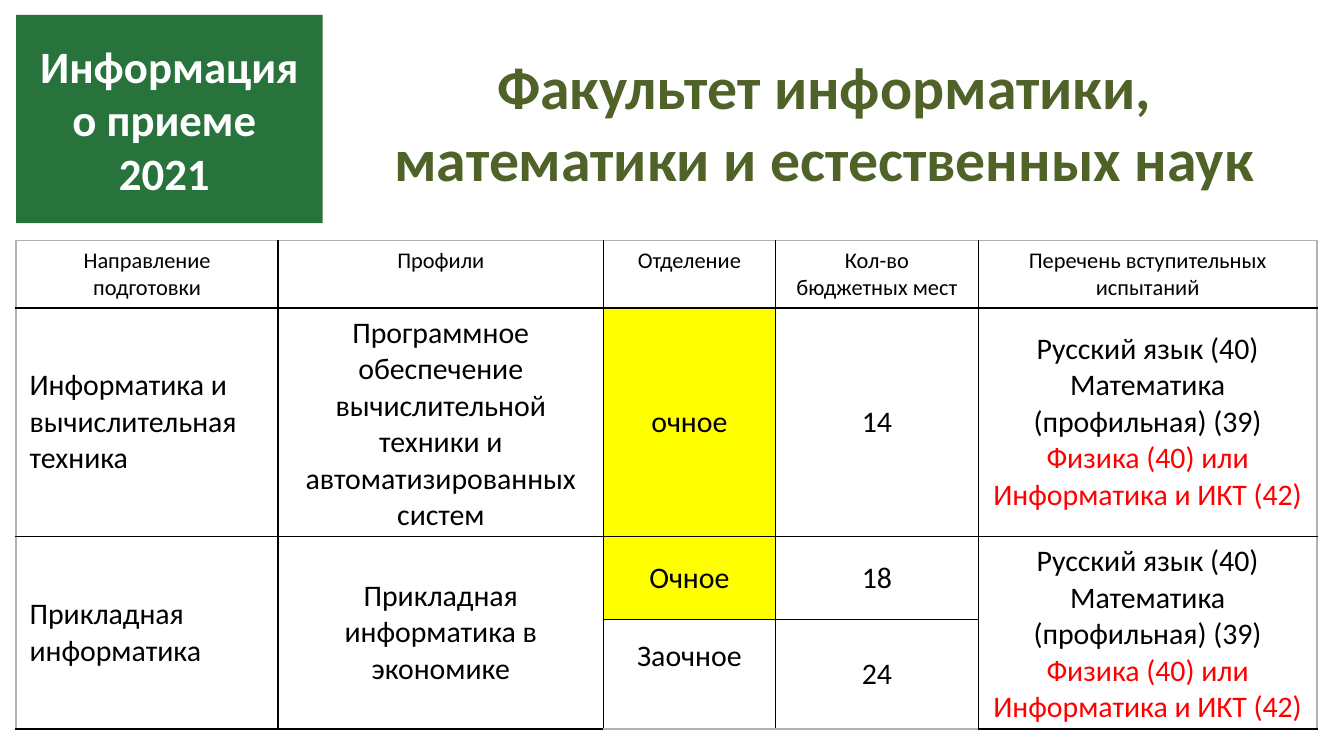
from lxml import etree
from pptx import Presentation
from pptx import util as u
from pptx.dml.color import RGBColor
from pptx.enum import shapes, text
from pptx.oxml import ns

FONT = "Calibri"
BLACK, WHITE, RED, YELLOW = "000000", "FFFFFF", "FF0000", "FFFF00"
GREEN, OLIVE, GRAY = "27733B", "4F6228", "B2B2B2"
COLUMN_WIDTHS = [1.95, 2.42, 1.28, 1.51, 2.52]
ROW_HEIGHTS = [0.5, 1.7, 0.62, 0.81]
EXAMS = [
    "Русский язык (40)",
    "Математика (профильная) (39)",
    "Физика (40) или Информатика и ИКТ (42)",
]
ROWS = [
    ["Направление подготовки", "Профили", "Отделение",
     "Кол-во бюджетных мест", "Перечень вступительных испытаний"],
    ["Информатика и вычислительная техника",
     "Программное обеспечение вычислительной техники и автоматизированных систем",
     "очное", "14", EXAMS],
    ["Прикладная информатика", "Прикладная информатика в экономике",
     "Очное", "18", EXAMS],
    ["", "", "Заочное", "24", ""],
]


def color(value):
    return RGBColor.from_string(value)


def write(frame, lines, size, font_color, bold=False, align=text.PP_ALIGN.CENTER):
    frame.word_wrap = True
    for index, line in enumerate(lines):
        paragraph = frame.add_paragraph() if index else frame.paragraphs[0]
        paragraph.text = line
        paragraph.alignment = align
        font = paragraph.font
        font.name, font.size, font.bold = FONT, u.Pt(size), bold
        font.color.rgb = color(font_color)


def add_badge(slide):
    shape = slide.shapes.add_shape(
        shapes.MSO_SHAPE.RECTANGLE,
        u.Inches(0.12), u.Inches(0.11), u.Inches(2.28), u.Inches(1.55))
    shape.shadow.inherit = False
    shape.fill.solid()
    shape.fill.fore_color.rgb = color(GREEN)
    shape.line.fill.background()
    shape.text_frame.vertical_anchor = text.MSO_ANCHOR.MIDDLE
    write(shape.text_frame, ["Информация о приеме \v2021 "], 24, WHITE, bold=True)


def add_title(slide):
    shape = slide.shapes.add_textbox(
        u.Inches(2.77), u.Inches(0.32), u.Inches(6.73), u.Inches(1.18))
    title = "Факультет информатики, математики и естественных наук"
    write(shape.text_frame, [title], 32, OLIVE, bold=True)


def set_borders(cell, row, column):
    outer_sides = {
        "lnL": column == 0,
        "lnR": column == len(COLUMN_WIDTHS) - 1,
        "lnT": row == 0,
        "lnB": row == len(ROW_HEIGHTS) - 1,
    }
    properties = cell._tc.get_or_add_tcPr()
    for index, (side, is_outer) in enumerate(outer_sides.items()):
        line = etree.Element(ns.qn(f"a:{side}"), w=str(u.Pt(1)))
        fill = etree.SubElement(line, ns.qn("a:solidFill"))
        etree.SubElement(fill, ns.qn("a:srgbClr"), val=GRAY if is_outer else BLACK)
        properties.insert(index, line)


def fill_cell(cell, content, row, column):
    lines = content if isinstance(content, list) else [content]
    is_header = row == 0
    align = text.PP_ALIGN.LEFT if column == 0 and not is_header else text.PP_ALIGN.CENTER
    write(cell.text_frame, lines, 12 if is_header else 16, BLACK, align=align)
    if content is EXAMS:
        cell.text_frame.paragraphs[-1].font.color.rgb = color(RED)
    if not is_header:
        cell.vertical_anchor = text.MSO_ANCHOR.MIDDLE
    if lines[0].lower() == "очное":
        cell.fill.solid()
        cell.fill.fore_color.rgb = color(YELLOW)
    else:
        cell.fill.background()
    set_borders(cell, row, column)


def add_admission_table(slide):
    table = slide.shapes.add_table(
        len(ROW_HEIGHTS), len(COLUMN_WIDTHS), u.Inches(0.12), u.Inches(1.79),
        u.Inches(sum(COLUMN_WIDTHS)), u.Inches(sum(ROW_HEIGHTS))).table
    table.first_row = table.horz_banding = False
    for column, width in zip(table.columns, COLUMN_WIDTHS):
        column.width = u.Inches(width)
    for row, height in zip(table.rows, ROW_HEIGHTS):
        row.height = u.Inches(height)
    for row, contents in enumerate(ROWS):
        for column, content in enumerate(contents):
            fill_cell(table.cell(row, column), content, row, column)
    for column in (0, 1, 4):
        table.cell(2, column).merge(table.cell(3, column))
    table.cell(3, 2).margin_bottom = u.Inches(0.32)


def main():
    presentation = Presentation()
    presentation.slide_width = u.Inches(10)
    presentation.slide_height = u.Inches(10 * 9 / 16)
    slide = presentation.slides.add_slide(presentation.slide_layouts[6])
    add_badge(slide)
    add_title(slide)
    add_admission_table(slide)
    presentation.save("out.pptx")


if __name__ == "__main__":
    main()
